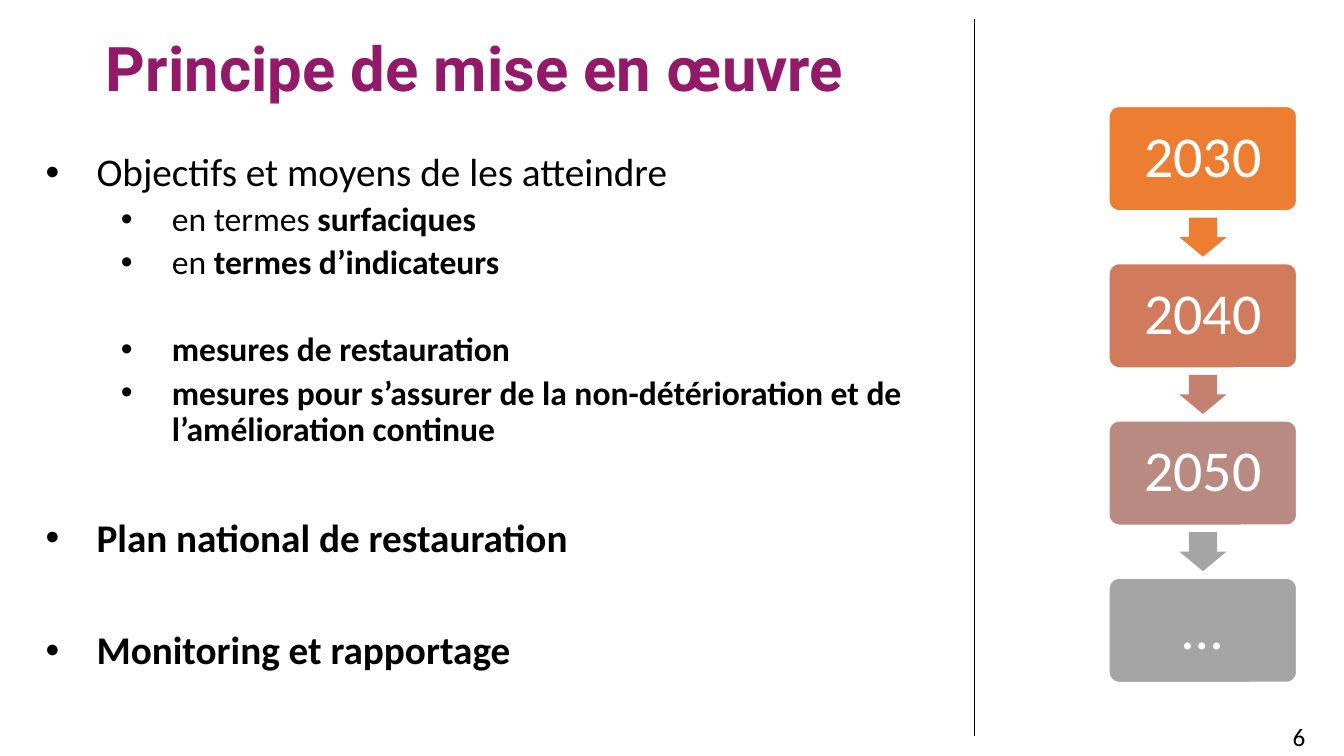
from pptx import Presentation
from pptx.dml.color import RGBColor
from pptx.enum.shapes import MSO_CONNECTOR, MSO_SHAPE
from pptx.enum.text import MSO_ANCHOR, PP_ALIGN
from pptx.oxml.ns import qn
from pptx.util import Inches, Pt
from lxml import etree

ROUNDED = MSO_SHAPE.ROUNDED_RECTANGLE
ARROW = MSO_SHAPE.RIGHT_ARROW
STRAIGHT = MSO_CONNECTOR.STRAIGHT
MIDDLE = MSO_ANCHOR.MIDDLE
LEFT, CENTER, RIGHT = PP_ALIGN.LEFT, PP_ALIGN.CENTER, PP_ALIGN.RIGHT

PAGE_WIDTH = 10
PAGE_HEIGHT = PAGE_WIDTH * 9 / 16
TITLE = "Principe de mise en œuvre"
BULLETS = [
    (0, 0, [("Objectifs et moyens de les atteindre", False)]),
    (1, 3.8, [("en termes ", False), ("surfaciques", True)]),
    (1, 3.8, [("en ", False), ("termes d’indicateurs", True)]),
    (1, 27, [("mesures de restauration", True)]),
    (1, 3.8, [("mesures pour s’assurer de la non-détérioration et de "
               "l’amélioration continue", True)]),
    (0, 37.5, [("Plan national de restauration", True)]),
    (0, 37.5, [("Monitoring et rapportage", True)]),
]
LEVELS = [{"size": 21, "margin": 0.38}, {"size": 18, "margin": 0.94}]
HANGING = 0.38
STEPS = [("2030", "ED7D31"), ("2040", "D17B5C"), ("2050", "B98A82"), ("…", "A5A5A5")]
ARROW_COLORS = ["ED7D31", "C48170", "A5A5A5"]
STEP_LEFT, STEP_TOP, STEP_WIDTH, STEP_HEIGHT = 8.25, 0.79, 1.4, 0.78
STEP_PITCH = 1.17
ARROW_LENGTH, ARROW_WIDTH = 0.29, 0.35


def color(value):
    return RGBColor.from_string(value)


def add_span(para, text, size, font="Calibri", fill="000000", bold=False):
    span = para.add_run()
    span.text = text
    span.font.name = font
    span.font.size = Pt(size)
    span.font.bold = bold
    span.font.color.rgb = color(fill)


def write(frame, text, align=LEFT, spacing=None, **font):
    para = frame.paragraphs[0]
    para.alignment = align
    para.line_spacing = spacing
    add_span(para, text, **font)


def add_box(page, left, top, width, height):
    box = page.shapes.add_textbox(Inches(left), Inches(top), Inches(width), Inches(height))
    box.text_frame.word_wrap = True
    return box.text_frame


def add_bullet(para, margin):
    properties = para._p.get_or_add_pPr()
    properties.set("marL", str(Inches(margin)))
    properties.set("indent", str(-Inches(HANGING)))
    etree.SubElement(properties, qn("a:buFont")).set("typeface", "Arial")
    etree.SubElement(properties, qn("a:buChar")).set("char", "•")


def add_bullets(frame):
    for index, (level, before, spans) in enumerate(BULLETS):
        para = frame.add_paragraph() if index else frame.paragraphs[0]
        para.level = level
        add_bullet(para, LEVELS[level]["margin"])
        para.line_spacing = 0.9
        para.space_before = Pt(before)
        for text, bold in spans:
            add_span(para, text, LEVELS[level]["size"], bold=bold)


def add_filled(page, kind, left, top, width, height, fill, adjustments):
    shape = page.shapes.add_shape(
        kind, Inches(left), Inches(top), Inches(width), Inches(height))
    shape.shadow.inherit = False
    shape.fill.solid()
    shape.fill.fore_color.rgb = color(fill)
    shape.line.fill.background()
    for index, value in enumerate(adjustments):
        shape.adjustments[index] = value
    return shape


def add_steps(page):
    for index, (label, fill) in enumerate(STEPS):
        top = STEP_TOP + index * STEP_PITCH
        step = add_filled(page, ROUNDED, STEP_LEFT, top, STEP_WIDTH, STEP_HEIGHT, fill, [0.1])
        step.line.color.rgb = color("FFFFFF")
        step.line.width = Pt(1)
        step.text_frame.vertical_anchor = MIDDLE
        write(step.text_frame, label, align=CENTER, spacing=0.9, size=31, fill="FFFFFF")
    for index, fill in enumerate(ARROW_COLORS):
        middle = STEP_TOP + index * STEP_PITCH + (STEP_HEIGHT + STEP_PITCH) / 2
        left = STEP_LEFT + (STEP_WIDTH - ARROW_LENGTH) / 2
        arrow = add_filled(page, ARROW, left, middle - ARROW_WIDTH / 2,
                           ARROW_LENGTH, ARROW_WIDTH, fill, [0.6, 0.5])
        arrow.rotation = 90


def add_divider(page):
    line = page.shapes.add_connector(
        STRAIGHT, Inches(7.25), Inches(0.14), Inches(7.25), Inches(5.48))
    line.line.color.rgb = color("000000")
    line.line.width = Pt(0.5)
    etree.SubElement(line._element.spPr, qn("a:effectLst"))


def main():
    deck = Presentation()
    deck.slide_width, deck.slide_height = Inches(PAGE_WIDTH), Inches(PAGE_HEIGHT)
    page = deck.slides.add_slide(deck.slide_layouts[6])
    title = add_box(page, 0.69, 0, 8.62, 1.09)
    title.vertical_anchor = MIDDLE
    write(title, TITLE, spacing=Pt(33), size=33, font="Roboto", fill="921A68", bold=True)
    add_bullets(add_box(page, 0.24, 1.09, 6.85, 4.08))
    add_steps(page)
    add_divider(page)
    write(add_box(page, 7.56, 5.32, 2.25, 0.3), "6", align=RIGHT, size=13.5)
    deck.save("out.pptx")


if __name__ == "__main__":
    main()
